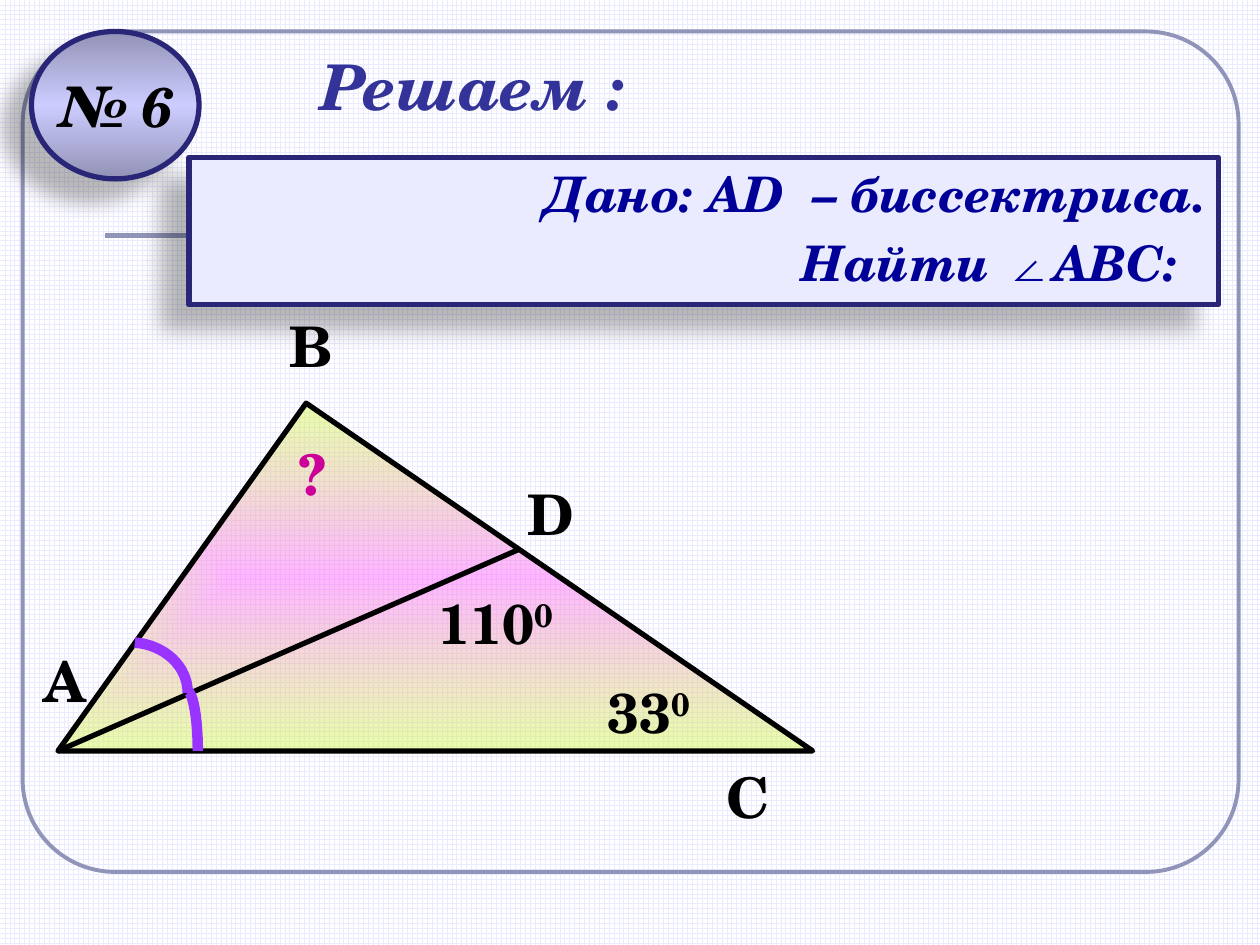
from lxml import etree
from pptx import Presentation
from pptx.dml.color import RGBColor
from pptx.enum.dml import MSO_PATTERN
from pptx.enum.shapes import MSO_CONNECTOR, MSO_SHAPE
from pptx.enum.text import MSO_ANCHOR, MSO_AUTO_SIZE, PP_ALIGN
from pptx.oxml import parse_xml
from pptx.oxml.ns import nsdecls, qn
from pptx.util import Inches, Pt

RECT, OVAL, ROUNDED = MSO_SHAPE.RECTANGLE, MSO_SHAPE.OVAL, MSO_SHAPE.ROUNDED_RECTANGLE
STRAIGHT = MSO_CONNECTOR.STRAIGHT
LEFT, CENTER, RIGHT = PP_ALIGN.LEFT, PP_ALIGN.CENTER, PP_ALIGN.RIGHT
TOP, MIDDLE = MSO_ANCHOR.TOP, MSO_ANCHOR.MIDDLE
GROW, FIXED = MSO_AUTO_SIZE.SHAPE_TO_FIT_TEXT, MSO_AUTO_SIZE.NONE
FONT = "TeX Gyre Schola"
BLACK, NAVY, GREY_BLUE, PALE, VIOLET = "000000", "292678", "9094B8", "EBEBFF", "9933FF"

TITLE = "Решаем :"
NUMBER = "№ 6"
TASK = ["Дано: AD  – биссектриса.", "Найти ∠АВС:  "]
A, B, C, D = (0.46, 5.96), (2.43, 3.2), (6.45, 5.96), (4.12, 4.36)
ANGLE_ARCS = [
    [(1.49, 5.49), (1.53, 5.49), (1.57, 5.7), (1.57, 5.96)],
    [(1.07, 5.1), (1.31, 5.12), (1.49, 5.29), (1.49, 5.5)],
]
VERTEX_LABELS = [
    ("А", (0.25, 5.08, 0.54, 0.63)),
    ("В", (2.2, 2.42, 0.54, 0.63)),
    ("С", (5.67, 6, 0.52, 0.63)),
    ("D", (4.09, 3.76, 0.57, 0.63)),
]
ANGLE_LABELS = [
    ("33", "0", BLACK, (4.72, 5.33, 1.1, 0.63)),
    ("110", "0", BLACK, (3.38, 4.62, 1.34, 0.63)),
    ("?", "", "CC0099", (2.27, 3.44, 0.47, 0.63)),
]


def rgb(value):
    return RGBColor.from_string(value)


def inches(values):
    return [Inches(value) for value in values]


def set_line(item, color, width):
    item.line.color.rgb = rgb(color)
    item.line.width = Pt(width)


def set_gradient(shape, stops, direction):
    stop_xml = "".join(
        f'<a:gs pos="{pos * 1000}"><a:srgbClr val="{color}">'
        f'<a:alpha val="{alpha * 1000}"/></a:srgbClr></a:gs>'
        for pos, color, alpha in stops
    )
    gradient = parse_xml(
        f'<a:gradFill {nsdecls("a")} rotWithShape="1">'
        f"<a:gsLst>{stop_xml}</a:gsLst>{direction}</a:gradFill>"
    )
    properties = shape._element.spPr
    properties.replace(properties.find(qn("a:noFill")), gradient)


def style(shape, line, width, fill=None):
    shape.shadow.inherit = False
    if fill:
        shape.fill.solid()
        shape.fill.fore_color.rgb = rgb(fill)
    else:
        shape.fill.background()
    set_line(shape, line, width)
    return shape


def add_shadow(shape):
    effects = shape._element.spPr.find(qn("a:effectLst"))
    effects.append(parse_xml(
        f'<a:outerShdw {nsdecls("a")} blurRad="{Pt(11.8)}" dist="{Pt(19.7)}" '
        f'dir="{141 * 60000}" algn="ctr" rotWithShape="0">'
        '<a:srgbClr val="000000"><a:alpha val="28000"/></a:srgbClr></a:outerShdw>'
    ))


def add_line(slide, start, end, color, width):
    line = slide.shapes.add_connector(STRAIGHT, *inches(start + end))
    set_line(line, color, width)
    etree.SubElement(line._element.spPr, qn("a:effectLst"))


def add_outline(slide, points, close):
    start, *rest = [tuple(inches(point)) for point in points]
    builder = slide.shapes.build_freeform(*start)
    builder.add_line_segments(rest, close=close)
    return builder.convert_to_shape()


def curve_points(controls, steps=16):
    def at(t):
        weights = ((1 - t) ** 3, 3 * t * (1 - t) ** 2, 3 * t * t * (1 - t), t ** 3)
        return tuple(sum(w * p[axis] for w, p in zip(weights, controls)) for axis in (0, 1))

    return [at(step / steps) for step in range(steps + 1)]


def write(shape, lines, size=32, color=BLACK, italic=False, align=LEFT, anchor=TOP,
          wrap=False, fit=GROW, before=0, superscript=""):
    frame = shape.text_frame
    frame.word_wrap, frame.auto_size, frame.vertical_anchor = wrap, fit, anchor
    for index, line in enumerate(lines):
        paragraph = frame.add_paragraph() if index else frame.paragraphs[0]
        paragraph.alignment = align
        paragraph.space_before = Pt(before)
        for text, raised in ((line, False), (superscript, True)):
            if not text:
                continue
            run = paragraph.add_run()
            run.text = text
            font = run.font
            font.name, font.size, font.bold, font.italic = FONT, Pt(size), True, italic
            font.color.rgb = rgb(color)
            if raised:
                run._r.get_or_add_rPr().set("baseline", "30000")


def add_label(slide, text, box, **text_format):
    write(slide.shapes.add_textbox(*inches(box)), [text], **text_format)


def main():
    prs = Presentation()
    prs.slide_width, prs.slide_height = Inches(10), Inches(7.5)
    slide = prs.slides.add_slide(prs.slide_layouts[6])
    shapes = slide.shapes

    background = slide.background.fill
    background.patterned()
    background.pattern = MSO_PATTERN.LARGE_GRID
    background.fore_color.rgb = rgb(PALE)
    background.back_color.rgb = rgb("FFFFFF")

    border = style(shapes.add_shape(ROUNDED, *inches((0.18, 0.25, 9.65, 6.67))), GREY_BLUE, 2.25)
    border.adjustments[0] = 0.11
    add_line(slide, (0.83, 1.87), (9.25, 1.87), GREY_BLUE, 3)

    triangle = style(add_outline(slide, [A, C, B], True), BLACK, 3)
    set_gradient(
        triangle,
        [(0, "FF66FF", 47), (100, "CCFF33", 41)],
        '<a:path path="rect"><a:fillToRect l="50000" t="50000" r="50000" b="50000"/></a:path>',
    )
    add_line(slide, A, D, BLACK, 3)
    for controls in ANGLE_ARCS:
        style(add_outline(slide, curve_points(controls), False), VIOLET, 6)

    for letter, box in VERTEX_LABELS:
        add_label(slide, letter, box)
    for value, degree, color, box in ANGLE_LABELS:
        add_label(slide, value, box, color=color, superscript=degree, wrap=True)

    task = style(shapes.add_shape(RECT, *inches((1.5, 1.25, 8.17, 1.17))), NAVY, 3, PALE)
    add_shadow(task)
    write(task, TASK, size=28, color="000099", italic=True, align=RIGHT, wrap=True, before=5.6)

    badge = style(shapes.add_shape(OVAL, *inches((0.25, 0.25, 1.33, 1.17))), NAVY, 3)
    set_gradient(
        badge,
        [(0, "9292B6", 100), (50, "CCCCFF", 100), (100, "9292B6", 100)],
        f'<a:lin ang="{90 * 60000}" scaled="1"/>',
    )
    add_shadow(badge)
    write(badge, [NUMBER], italic=True, align=CENTER, anchor=MIDDLE, fit=FIXED)

    add_label(slide, TITLE, (1.92, 0.33, 3.67, 0.67), size=36, color="333399",
              italic=True, align=CENTER, fit=FIXED)
    prs.save("out.pptx")


if __name__ == "__main__":
    main()
